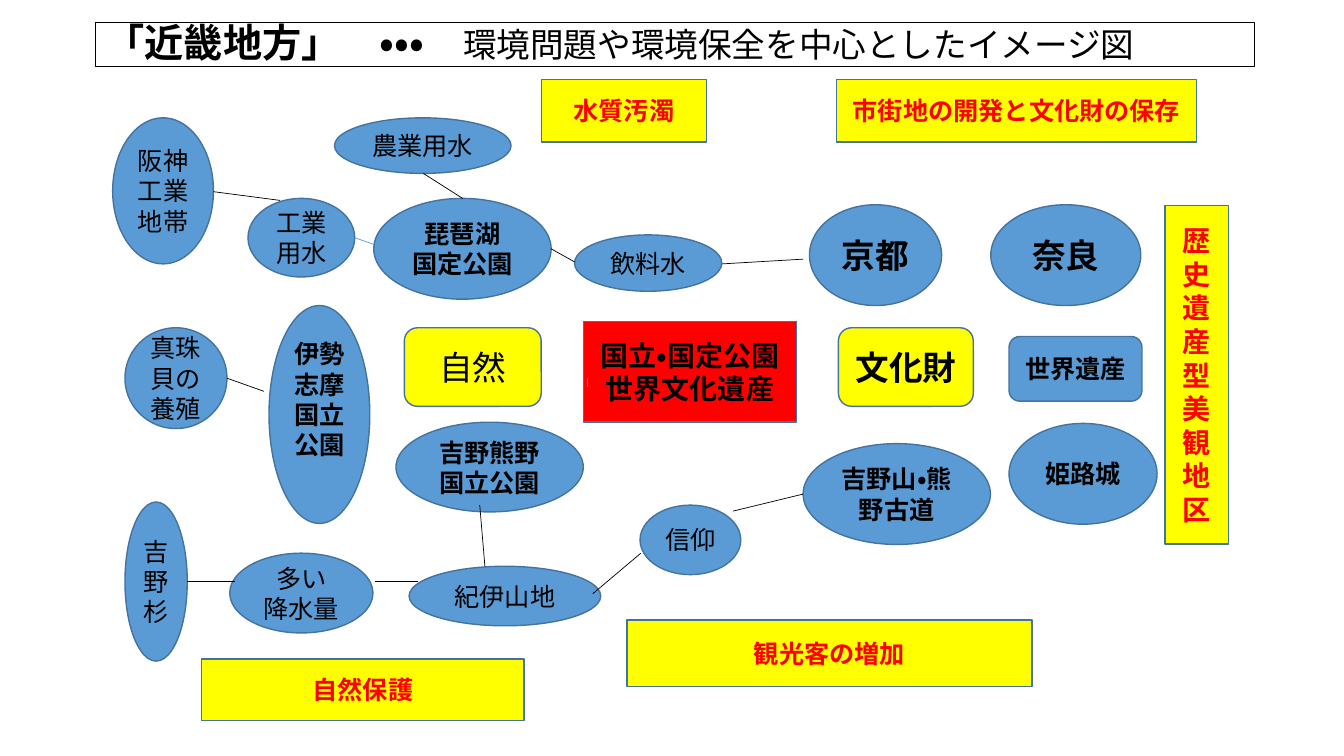
from pptx import Presentation
from pptx.dml.color import RGBColor
from pptx.enum.lang import MSO_LANGUAGE_ID as Language
from pptx.enum.shapes import MSO_CONNECTOR as Connector, MSO_SHAPE as Shape
from pptx.enum.text import MSO_ANCHOR as Anchor, MSO_AUTO_SIZE as AutoSize, PP_ALIGN as Align
from pptx.oxml.xmlchemy import OxmlElement
from pptx.util import Cm, Pt

BLACK, RED, YELLOW = "000000", "FF0000", "FFFF00"
BLUE, OUTLINE = "5B9BD5", "43739E"


def color(hex_string):
    return RGBColor.from_string(hex_string)


def format_span(span, size, bold, hex_string):
    font = span.font
    font.name = "Calibri"
    font.size = Pt(size)
    font.bold = bold
    font.color.rgb = color(hex_string)
    font.language_id = Language.JAPANESE


deck = Presentation()
deck.slide_width, deck.slide_height = Cm(33.87), Cm(19.05)
page = deck.slides.add_slide(deck.slide_layouts[5])

# Title bar
title = page.shapes.title
title.left, title.top, title.width, title.height = Cm(2.41), Cm(0.56), Cm(29.21), Cm(1.12)
title.line.color.rgb = color(BLACK)
title.line.width = Pt(0.75)
title.text_frame.auto_size = AutoSize.NONE
title.text_frame.vertical_anchor = Anchor.MIDDLE
para = title.text_frame.paragraphs[0]
para.alignment = Align.LEFT
para.line_spacing = 0.9
for text, size, bold in [
    ("「近畿地方」　・・・　", 28, True),
    ("環境問題や環境保全を中心としたイメージ図", 24, False),
]:
    span = para.add_run()
    span.text = text
    format_span(span, size, bold, BLACK)

# Groups of boxes: shape, fill, text colour, bold, then (text, size, left, top, width, height)
groups = [
    # Central theme
    (Shape.RECTANGLE, RED, BLACK, True, [
        ("国立・国定公園\n世界文化遺産", 20, 14.71, 8.1, 5.36, 2.54),
    ]),
    # Branches
    (Shape.ROUNDED_RECTANGLE, YELLOW, BLACK, False, [
        ("自然", 24, 10.19, 8.26, 3.45, 1.98),
    ]),
    (Shape.ROUNDED_RECTANGLE, YELLOW, BLACK, True, [
        ("文化財", 24, 21.13, 8.26, 3.4, 1.98),
    ]),
    (Shape.ROUNDED_RECTANGLE, BLUE, BLACK, True, [
        ("世界遺産", 18, 25.43, 8.48, 3.35, 1.63),
    ]),
    # Parks and heritage places
    (Shape.OVAL, BLUE, BLACK, True, [
        ("琵琶湖\n国定公園", 18, 9.42, 5, 4.47, 2.54),
        ("奈良", 24, 24.97, 5.16, 3.78, 2.54),
        ("京都", 24, 20.4, 5.16, 3.33, 2.54),
        ("吉野山・熊野古道", 18, 20.24, 11.18, 4.72, 2.54),
        ("伊勢志摩国立公園", 18, 6.78, 7.7, 2.54, 5.49),
        ("吉野熊野国立公園", 18, 9.98, 10.64, 4.72, 2.26),
        ("姫路城", 18, 25.43, 10.67, 3.73, 2.54),
    ]),
    # Related features
    (Shape.OVAL, BLUE, BLACK, False, [
        ("紀伊山地", 18, 10.31, 14.27, 4.83, 1.5),
        ("信仰", 18, 16.13, 12.73, 2.54, 1.75),
        ("多い\n降水量", 18, 5.79, 13.94, 3.61, 2.01),
        ("吉野杉", 18, 3.15, 12.65, 1.57, 4.01),
        ("真珠貝の養殖", 18, 3.15, 8.26, 2.57, 2.54),
        ("飲料水", 18, 14.48, 5.92, 3.71, 1.42),
        ("農業用水", 18, 8.43, 2.97, 4.45, 1.4),
        ("工業用水", 18, 6.25, 5, 2.69, 1.98),
        ("阪神工業地帯", 18, 2.84, 2.97, 2.54, 3.68),
    ]),
    # Issues
    (Shape.RECTANGLE, YELLOW, RED, True, [
        ("市街地の開発と文化財の保存", 18, 21.08, 2.01, 9.07, 1.57),
        ("水質汚濁", 18, 13.64, 2.01, 4.17, 1.57),
        ("自然保護", 18, 5.08, 16.61, 8.13, 1.55),
        ("歴史遺産型美観地区", 20, 29.36, 5.18, 1.6, 8.53),
        ("観光客の増加", 18, 15.8, 15.62, 10.21, 1.68),
    ]),
]
for kind, fill, text_color, bold, items in groups:
    for text, size, *place in items:
        box = page.shapes.add_shape(kind, *[Cm(length) for length in place])
        box.shadow.inherit = False
        box.fill.solid()
        box.fill.fore_color.rgb = color(fill)
        box.line.color.rgb = color(OUTLINE)
        box.line.width = Pt(1)
        frame = box.text_frame
        frame.word_wrap = True
        frame.vertical_anchor = Anchor.MIDDLE
        frame.text = text
        if text == "伊勢志摩国立公園":
            frame.margin_bottom = Cm(0.89)  # lifts the text above the centre
        for para in frame.paragraphs:
            para.alignment = Align.CENTER
            format_span(para.runs[0], size, bold, text_color)

# Links between boxes: colour, start x, start y, end x, end y
links = [
    (BLUE, 14.81, 9.75, 14.81, 9.53),
    (BLUE, 9.4, 6.15, 8.94, 5.99),
    (BLACK, 20.24, 6.53, 18.19, 6.65),
    (BLACK, 18.47, 12.88, 20.24, 12.45),
    (BLACK, 12.09, 12.73, 12.22, 14.27),
    (BLACK, 14.94, 14.96, 16.15, 13.94),
    (BLACK, 11.66, 5, 10.67, 4.37),
    (BLACK, 5.38, 4.83, 7.06, 5.05),
    (BLACK, 13.89, 6.27, 14.48, 6.6),
    (BLACK, 6.65, 9.86, 5.72, 9.53),
    (BLACK, 9.45, 14.66, 10.54, 14.66),
    (BLACK, 4.72, 14.66, 5.92, 14.66),
]
for line_color, *ends in links:
    link = page.shapes.add_connector(Connector.STRAIGHT, *[Cm(length) for length in ends])
    link.line.color.rgb = color(line_color)
    link.line.width = Pt(0.5)
    link._element.spPr.append(OxmlElement("a:effectLst"))

deck.save("out.pptx")
